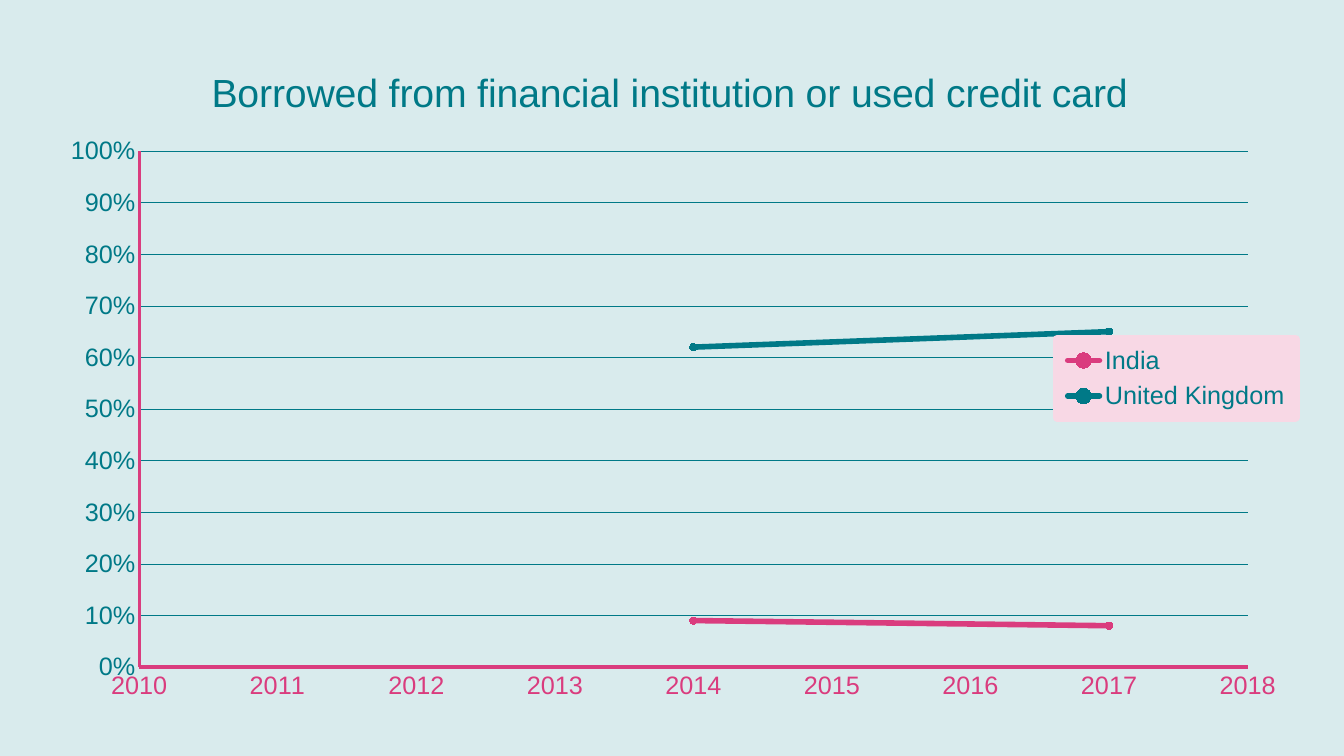
"""Build a slide with a scatter chart of borrowing in India and the United Kingdom."""
import pptx
import pptx.chart.data
import pptx.dml.color
import pptx.enum.chart
import pptx.oxml
import pptx.oxml.ns
import pptx.util
from dataclasses import dataclass
from pptx.util import Inches


@dataclass(frozen=True)
class Theme:
    teal: str = "007987"
    pink: str = "DA3C7E"
    background: str = "D9EBED"
    legend: str = "F8D8E5"
    font: str = "Arial"
    title_size: int = 28
    text_size: int = 18


theme = Theme()


def rgb(value):
    return pptx.dml.color.RGBColor.from_string(value)


def place(element, before, **parts):
    """Give a chart part a manual layout, ahead of the named child elements."""
    for old in element.findall(pptx.oxml.ns.qn("c:layout")):
        element.remove(old)
    tags = "".join(f'<c:{name} val="{value}"/>' for name, value in parts.items())
    layout = pptx.oxml.parse_xml(
        f'<c:layout {pptx.oxml.ns.nsdecls("c")}><c:manualLayout>{tags}</c:manualLayout></c:layout>')
    element.insert_element_before(layout, *before)


prs = pptx.Presentation()
prs.slide_width, prs.slide_height = Inches(13.33), Inches(7.5)
s = prs.slides.add_slide(prs.slide_layouts[6])
s.background.fill.solid()
s.background.fill.fore_color.rgb = rgb(theme.background)

years = [2011, 2014, 2017]
borrowing = [
    ("India", theme.pink, [None, 0.09, 0.08]),
    ("United Kingdom", theme.teal, [None, 0.62, 0.65]),
]
data = pptx.chart.data.XyChartData()
for name, color, shares in borrowing:
    series = data.add_series(name)
    for year, share in zip(years, shares):
        series.add_data_point(year, share)

chart = s.shapes.add_chart(
    pptx.enum.chart.XL_CHART_TYPE.XY_SCATTER_LINES,
    Inches(0.46), Inches(0.43), Inches(12.45), Inches(6.64), data).chart
chart.font.name = theme.font
chart.font.size = pptx.util.Pt(theme.text_size)
chart.font.color.rgb = rgb(theme.teal)
place(chart._chartSpace.chart.plotArea, ["c:scatterChart"], layoutTarget="inner",
      xMode="edge", yMode="edge", x=0.074, y=0.161, w=0.883, h=0.771)

chart.has_title = True
p = chart.chart_title.text_frame.paragraphs[0]
p.text = "Borrowed from financial institution or used credit card"
p.font.name = theme.font
p.font.size = pptx.util.Pt(theme.title_size)
p.font.bold = False
p.font.color.rgb = rgb(theme.teal)
place(chart.chart_title._element, ["c:overlay", "c:spPr", "c:txPr"],
      xMode="edge", yMode="edge", x=0.126, y=0.027)

for series, (name, color, shares) in zip(chart.plots[0].series, borrowing):
    for point in series._element.xpath("c:yVal//c:pt[c:v='None']"):
        point.getparent().remove(point)
    series.smooth = False
    series.format.line.color.rgb = rgb(color)
    series.format.line.width = pptx.util.Pt(4)
    series._element.spPr.find(pptx.oxml.ns.qn("a:ln")).set("cap", "rnd")
    series.marker.style = pptx.enum.chart.XL_MARKER_STYLE.CIRCLE
    series.marker.size = 5
    series.marker.format.fill.solid()
    series.marker.format.fill.fore_color.rgb = rgb(color)
    series.marker.format.line.color.rgb = rgb(color)

axes = [
    (chart.category_axis, theme.pink, 2010, 2018, 1, "0"),
    (chart.value_axis, theme.teal, 0, 1, 0.1, "0%"),
]
for axis, color, low, high, step, number_format in axes:
    axis.minimum_scale, axis.maximum_scale, axis.major_unit = low, high, step
    axis.major_tick_mark = pptx.enum.chart.XL_TICK_MARK.NONE
    axis.minor_tick_mark = pptx.enum.chart.XL_TICK_MARK.NONE
    axis.format.line.color.rgb = rgb(theme.pink)
    axis.format.line.width = pptx.util.Pt(2.5)
    axis.tick_labels.number_format = number_format
    axis.tick_labels.number_format_is_linked = False
    axis.tick_labels.font.name = theme.font
    axis.tick_labels.font.size = pptx.util.Pt(theme.text_size)
    axis.tick_labels.font.color.rgb = rgb(color)

chart.category_axis.has_major_gridlines = False
chart.value_axis.has_major_gridlines = True
grid = chart.value_axis.major_gridlines.format.line
grid.color.rgb = rgb(theme.teal)
grid.width = pptx.util.Pt(0.25)

chart.has_legend = True
legend = chart.legend
legend.position = pptx.enum.chart.XL_LEGEND_POSITION.RIGHT
legend.include_in_layout = True
legend.font.name = theme.font
legend.font.size = pptx.util.Pt(theme.text_size)
legend.font.color.rgb = rgb(theme.teal)
place(legend._element, ["c:overlay", "c:spPr", "c:txPr"],
      xMode="edge", yMode="edge", x=0.805, y=0.442, w=0.19, h=0.117)
box = pptx.oxml.parse_xml(
    f'<c:spPr {pptx.oxml.ns.nsdecls("c", "a")}>'
    f'<a:solidFill><a:srgbClr val="{theme.legend}"/></a:solidFill>'
    f'<a:ln w="{pptx.util.Pt(6)}"><a:solidFill><a:srgbClr val="{theme.legend}"/></a:solidFill>'
    '<a:round/></a:ln></c:spPr>')
legend._element.insert_element_before(box, "c:txPr")

prs.save("out.pptx")
